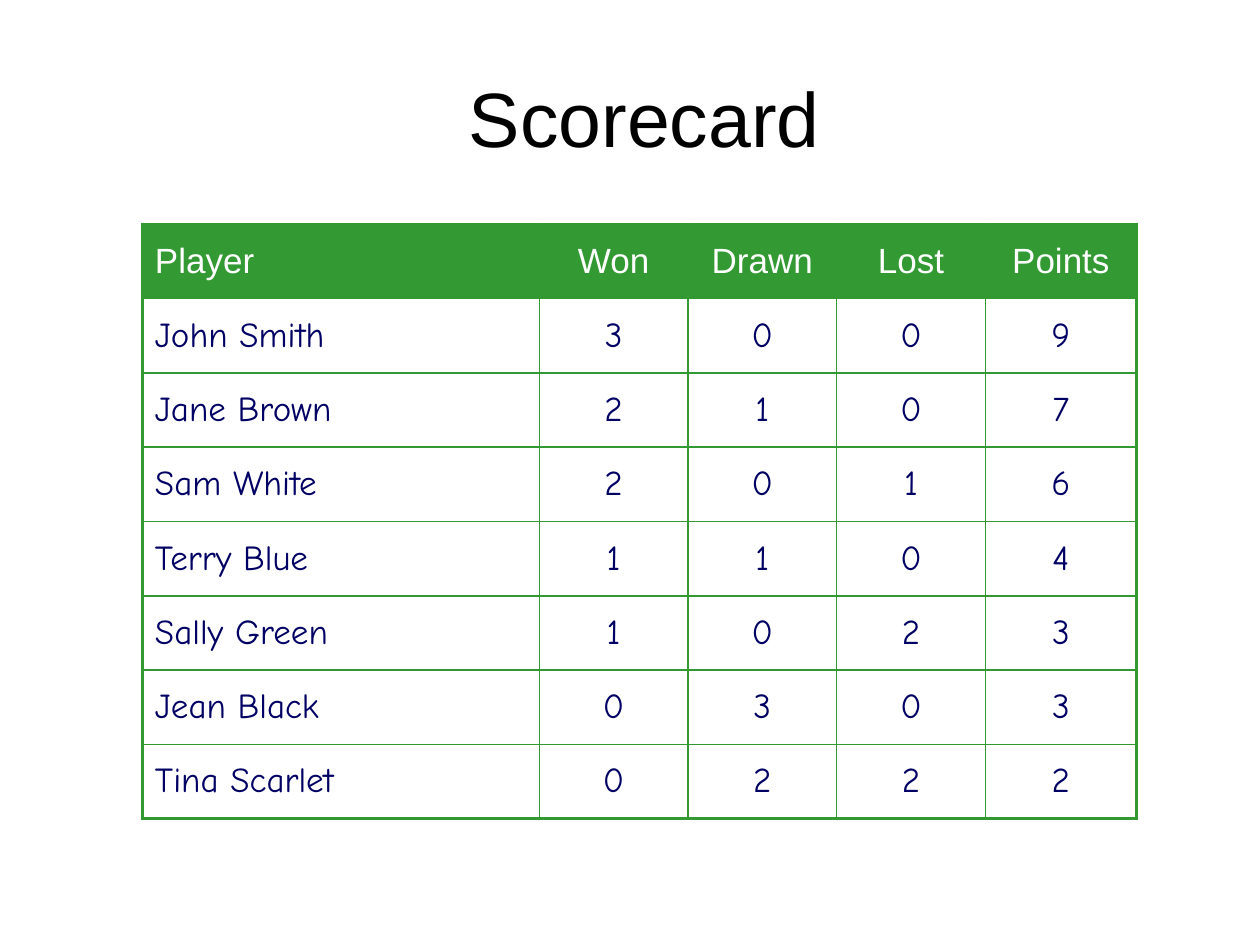
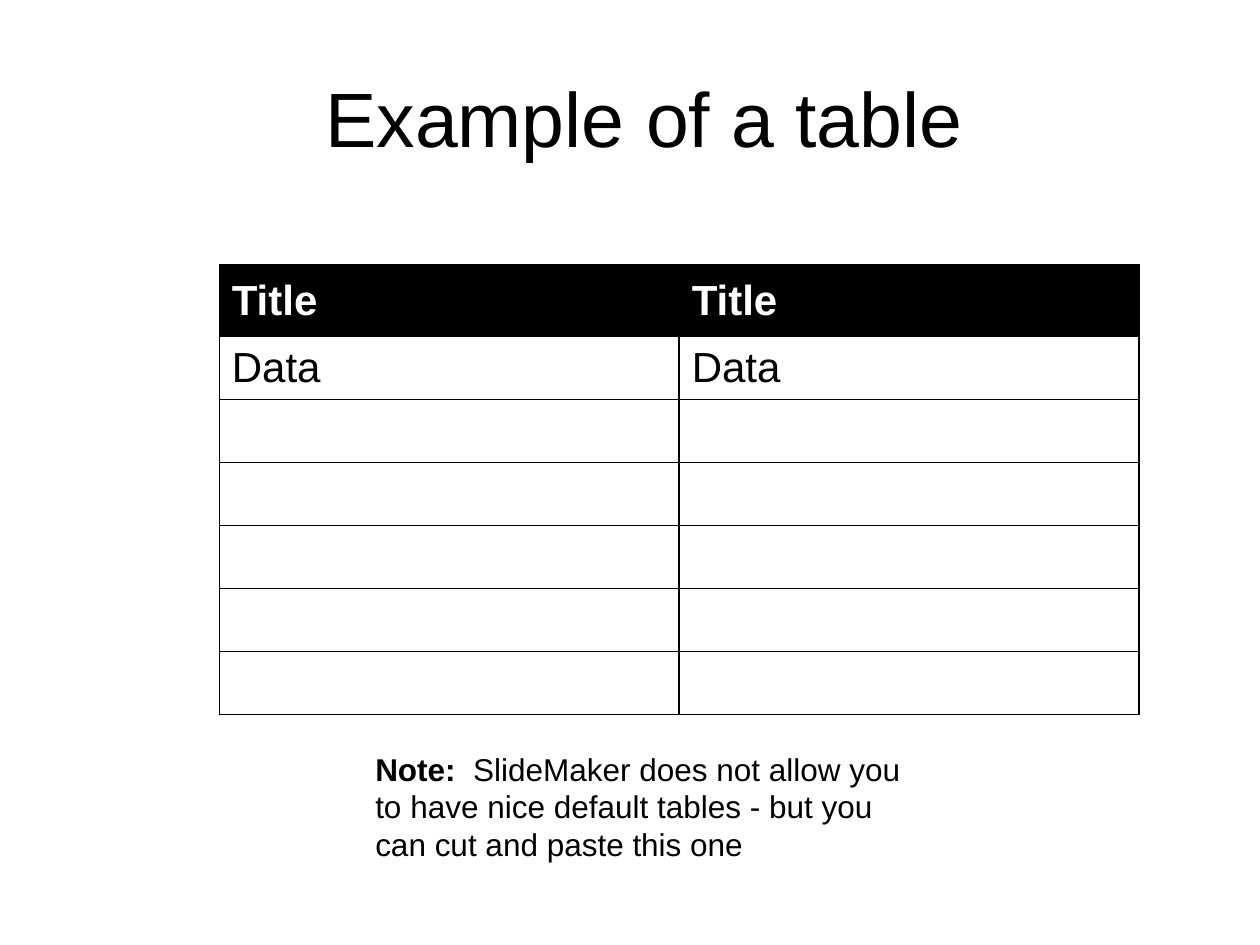
"""Build two slides, a scorecard and an example table."""
import pptx
import pptx.dml.color
import pptx.enum.text
import pptx.oxml
import pptx.oxml.ns
import pptx.util

RGB = pptx.dml.color.RGBColor
Inches = pptx.util.Inches
Pt = pptx.util.Pt
ALIGN = pptx.enum.text.PP_ALIGN
MIDDLE = pptx.enum.text.MSO_ANCHOR.MIDDLE

BLACK = RGB(0x00, 0x00, 0x00)
WHITE = RGB(0xFF, 0xFF, 0xFF)
GREEN = RGB(0x33, 0x99, 0x33)
NAVY = RGB(0x00, 0x00, 0x64)
SANS, HAND = "Arial", "Comic Neue"

SLIDE_SIZE = (10, 7.5)
TITLE_BOX = (1.06, 0.3, 8.11, 1.25)
NOTE_BOX = (2.88, 5.9, 4.49, 1)
INNER_LINE = 1

SCORES = {
    "title": "Scorecard",
    "rows": [
        ("Player", "Won", "Drawn", "Lost", "Points"),
        ("John Smith", 3, 0, 0, 9),
        ("Jane Brown", 2, 1, 0, 7),
        ("Sam White", 2, 0, 1, 6),
        ("Terry Blue", 1, 1, 0, 4),
        ("Sally Green", 1, 0, 2, 3),
        ("Jean Black", 0, 3, 0, 3),
        ("Tina Scarlet", 0, 2, 2, 2),
    ],
    "corner": (1.13, 1.78),
    "widths": [3.15] + [1.18] * 3 + [1.2],
    "heights": [0.59] * 8,
    "accent": GREEN,
    "edge": 2.25,
    "size": 20,
    "header_bold": False,
    "body": (HAND, NAVY),
    "number_align": ALIGN.CENTER,
}
EXAMPLE = {
    "title": "Example of a table",
    "rows": [("Title", "Title"), ("Data", "Data")] + [("", "")] * 5,
    "corner": (1.74, 2.1),
    "widths": [3.65] * 2,
    "heights": [0.57] + [0.5] * 6,
    "accent": BLACK,
    "edge": 1,
    "size": 24,
    "header_bold": True,
    "body": (SANS, BLACK),
    "number_align": ALIGN.LEFT,
}
NOTE = [
    ("Note:  ", True),
    ("SlideMaker does not allow you to have nice default tables"
     " - but you can cut and paste this one", False),
]


def set_font(font, name, size, color, bold=False):
    font.name, font.size, font.bold = name, Pt(size), bold
    font.color.rgb = color


def add_title(s, text):
    sp = s.shapes.title
    sp.left, sp.top, sp.width, sp.height = map(Inches, TITLE_BOX)
    tf = sp.text_frame
    tf.text, tf.vertical_anchor = text, MIDDLE
    p = tf.paragraphs[0]
    p.alignment = ALIGN.CENTER
    set_font(p.font, SANS, 44, BLACK)


def set_borders(cell, color, widths):
    tc_pr = cell._tc.get_or_add_tcPr()
    for side, width in zip("LRTB", widths):
        tc_pr.append(pptx.oxml.parse_xml(
            f'<a:ln{side} {pptx.oxml.ns.nsdecls("a")} w="{int(Pt(width))}">'
            f'<a:solidFill><a:srgbClr val="{color}"/></a:solidFill></a:ln{side}>'))


def add_grid(s, data):
    rows, widths, heights = data["rows"], data["widths"], data["heights"]
    box = (*data["corner"], sum(widths), sum(heights))
    table = s.shapes.add_table(len(rows), len(widths), *map(Inches, box)).table
    table.horz_banding = False
    for column, width in zip(table.columns, widths):
        column.width = Inches(width)
    for row, height in zip(table.rows, heights):
        row.height = Inches(height)

    last_row, last_col = len(rows) - 1, len(widths) - 1
    for i, values in enumerate(rows):
        for j, value in enumerate(values):
            cell = table.cell(i, j)
            outer = (j == 0, j == last_col, i == 0, i == last_row)
            set_borders(cell, data["accent"],
                        [data["edge"] if side else INNER_LINE for side in outer])
            cell.text, cell.vertical_anchor = str(value), MIDDLE
            p = cell.text_frame.paragraphs[0]
            p.alignment = data["number_align"] if j else ALIGN.LEFT
            if i == 0:
                cell.fill.solid()
                cell.fill.fore_color.rgb = data["accent"]
                set_font(p.font, SANS, data["size"], WHITE, data["header_bold"])
            else:
                cell.fill.background()
                name, color = data["body"]
                set_font(p.font, name, data["size"], color)


def add_note(s):
    tf = s.shapes.add_textbox(*map(Inches, NOTE_BOX)).text_frame
    tf.word_wrap = True
    tf.auto_size = pptx.enum.text.MSO_AUTO_SIZE.SHAPE_TO_FIT_TEXT
    for text, bold in NOTE:
        r = tf.paragraphs[0].add_run()
        r.text = text
        set_font(r.font, SANS, 18, BLACK, bold)


def main():
    prs = pptx.Presentation()
    prs.slide_width, prs.slide_height = map(Inches, SLIDE_SIZE)
    for data in (SCORES, EXAMPLE):
        s = prs.slides.add_slide(prs.slide_layouts.get_by_name("Title Only"))
        add_title(s, data["title"])
        add_grid(s, data)
    add_note(s)
    prs.save("out.pptx")


if __name__ == "__main__":
    main()
